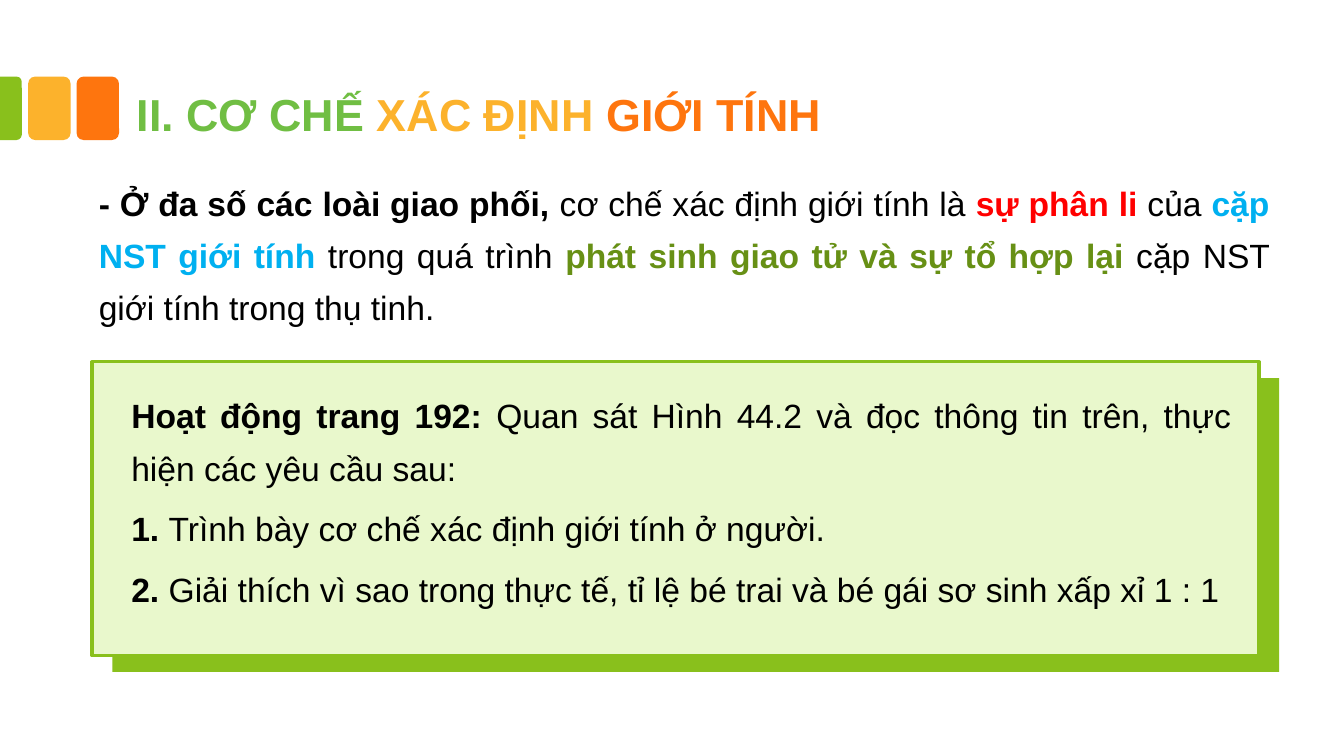
from pptx import Presentation
from pptx import util as u
from pptx.dml.color import RGBColor
from pptx.enum import shapes, text

COLORS = {
    "black": "000000", "leaf": "70BE43", "green": "89C01C", "moss": "679015",
    "mint": "E9F8CC", "amber": "FCB22C", "orange": "FE750E",
    "red": "FF0000", "blue": "00B0F0",
}


def rgb(name):
    return RGBColor.from_string(COLORS[name])


class SlideBuilder:
    font = "Arial"
    title_size = 32
    body_size = 24

    def __init__(self, slide):
        self.s = slide

    def block(self, kind, left, top, width, height, fill, line=None):
        sp = self.s.shapes.add_shape(
            kind, u.Cm(left), u.Cm(top), u.Cm(width), u.Cm(height))
        sp.shadow.inherit = False
        sp.fill.solid()
        sp.fill.fore_color.rgb = rgb(fill)
        if line:
            sp.line.color.rgb = rgb(line)
            sp.line.width = u.Pt(2.25)
        else:
            sp.line.fill.background()

    def text_frame(self, left, top, width, height):
        tf = self.s.shapes.add_textbox(
            u.Cm(left), u.Cm(top), u.Cm(width), u.Cm(height)).text_frame
        tf.word_wrap = True
        return tf

    def add_runs(self, p, runs, size):
        """Fill a paragraph with (text, colour, bold) runs."""
        p.font.name = self.font
        p.font.size = u.Pt(size)
        for words, color, bold in runs:
            r = p.add_run()
            r.text = words
            r.font.color.rgb = rgb(color)
            r.font.bold = bold

    def title(self, left, top, width, height, runs):
        tf = self.text_frame(left, top, width, height)
        tf.vertical_anchor = text.MSO_ANCHOR.BOTTOM
        tf.margin_left = tf.margin_right = u.Cm(0.33)
        tf.margin_top = tf.margin_bottom = u.Cm(0.18)
        p = tf.paragraphs[0]
        p.line_spacing = 1.2
        self.add_runs(p, runs, self.title_size)

    def body(self, left, top, width, height, paragraphs):
        tf = self.text_frame(left, top, width, height)
        for i, runs in enumerate(paragraphs):
            p = tf.add_paragraph() if i else tf.paragraphs[0]
            p.alignment = text.PP_ALIGN.JUSTIFY
            p.line_spacing = 1.3
            p.space_after = u.Pt(6)
            self.add_runs(p, runs, self.body_size)


def main():
    prs = Presentation()
    prs.slide_width, prs.slide_height = u.Cm(33.87), u.Cm(19.05)
    b = SlideBuilder(prs.slides.add_slide(prs.slide_layouts[6]))

    b.title(3.12, 1.73, 30.7, 2, [
        ("II. CƠ CHẾ ", "leaf", True),
        ("XÁC ĐỊNH ", "amber", True),
        ("GIỚI TÍNH", "orange", True),
    ])
    tabs = [(-0.25, 0.8, "green"), (0.71, 1.07, "amber"), (1.93, 1.07, "orange")]
    for left, width, color in tabs:
        b.block(shapes.MSO_SHAPE.ROUNDED_RECTANGLE, left, 1.93, width, 1.6, color)

    b.body(2.24, 4.17, 30, 4.11, [[
        ("- Ở đa số các loài giao phối, ", "black", True),
        ("cơ chế xác định giới tính là ", "black", False),
        ("sự phân li ", "red", True),
        ("của ", "black", False),
        ("cặp NST giới tính", "blue", True),
        (" trong quá trình ", "black", False),
        ("phát sinh giao tử và sự tổ hợp lại ", "moss", True),
        ("cặp NST giới tính trong thụ tinh.", "black", False),
    ]])

    card_size = 29.41, 7.4
    b.block(shapes.MSO_SHAPE.RECTANGLE, 2.83, 9.53, *card_size, "green")
    b.block(shapes.MSO_SHAPE.RECTANGLE, 2.32, 9.12, *card_size, "mint", "green")
    activity = [
        ("Hoạt động trang 192: ",
         "Quan sát Hình 44.2 và đọc thông tin trên, thực hiện các yêu cầu sau:"),
        ("1. ", "Trình bày cơ chế xác định giới tính ở người."),
        ("2. ", "Giải thích vì sao trong thực tế, tỉ lệ bé trai và bé gái "
                "sơ sinh xấp xỉ 1 : 1"),
    ]
    b.body(3.06, 9.53, 28.22, 5.87, [
        [(label, "black", True), (words, "black", False)]
        for label, words in activity
    ])
    prs.save("out.pptx")


if __name__ == "__main__":
    main()
